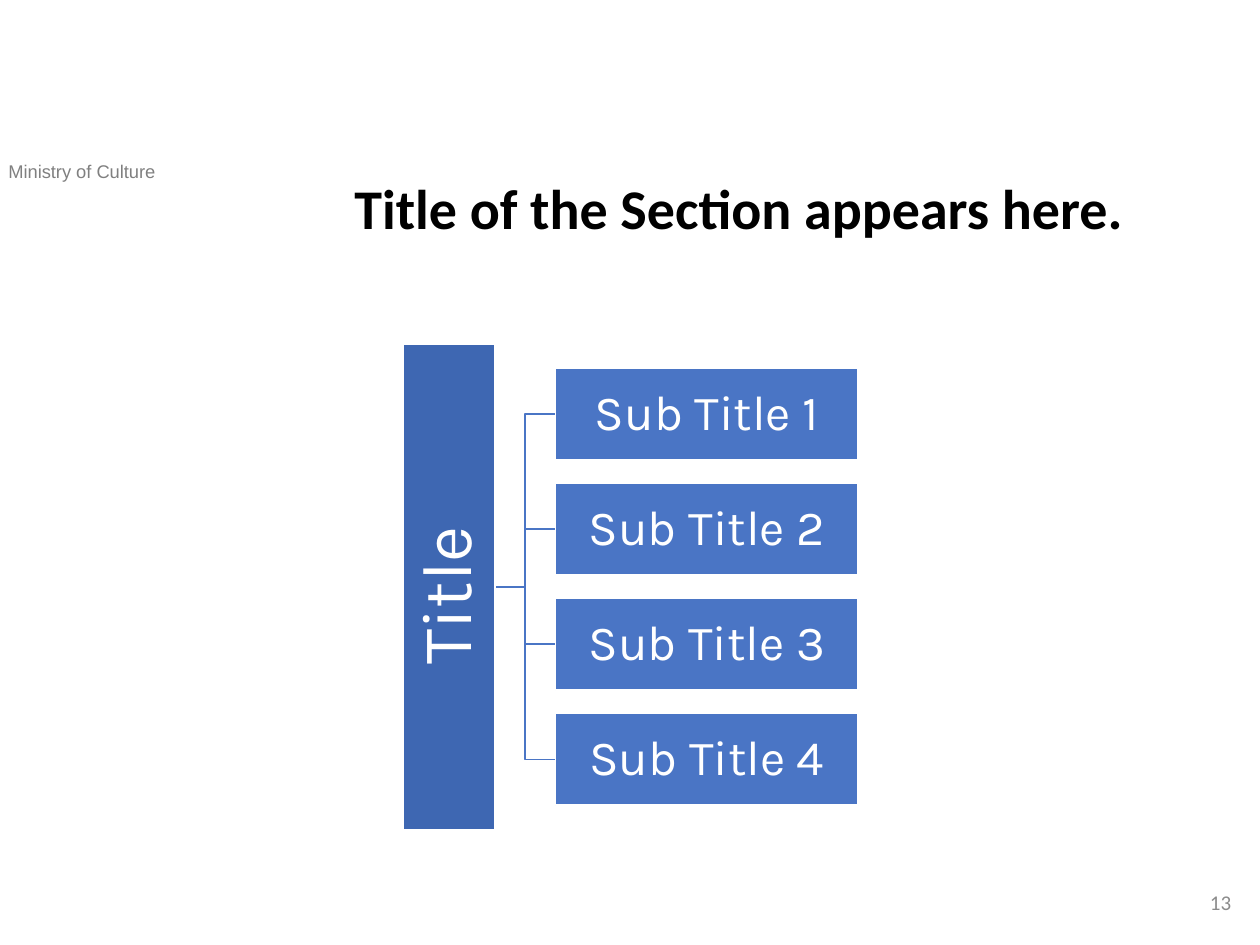
from dataclasses import dataclass

from pptx import Presentation
from pptx import util as u
from pptx.dml.color import RGBColor
from pptx.enum import shapes, text


@dataclass(frozen=True)
class Theme:
    bar: str = "3E67B2"
    box: str = "4A75C5"
    white: str = "FFFFFF"
    black: str = "000000"
    header: str = "808080"
    number: str = "8C8C8C"
    heading_font: str = "Calibri"
    header_font: str = "Arial"
    diagram_font: str = "Karla"
    heading_pt: float = 32
    bar_pt: float = 40
    box_pt: float = 28
    header_pt: float = 10.5
    number_pt: float = 12
    line_pt: float = 1


class Deck:
    def __init__(self, prs, theme):
        self.theme = theme
        self.s = prs.slides.add_slide(prs.slide_layouts[5])

    def set_text(self, sp, words, font, size, color, align, anchor, bold=False, spacing=1.0):
        tf = sp.text_frame
        tf.word_wrap = True
        tf.auto_size = text.MSO_AUTO_SIZE.NONE
        tf.vertical_anchor = anchor
        p = tf.paragraphs[0]
        p.alignment = align
        p.line_spacing = spacing
        p.space_before = u.Pt(0)
        r = p.add_run()
        r.text = words
        r.font.name = font
        r.font.size = u.Pt(size)
        r.font.bold = bold
        r.font.color.rgb = RGBColor.from_string(color)

    def heading(self, words, x, y, w, h):
        sp = self.s.shapes.title
        sp.left, sp.top, sp.width, sp.height = map(u.Cm, (x, y, w, h))
        self.set_text(sp, words, self.theme.heading_font, self.theme.heading_pt, self.theme.black,
                      text.PP_ALIGN.CENTER, text.MSO_ANCHOR.TOP, bold=True, spacing=0.9)

    def label(self, words, x, y, w, h, font, size, color, align, anchor):
        sp = self.s.shapes.add_textbox(*map(u.Cm, (x, y, w, h)))
        self.set_text(sp, words, font, size, color, align, anchor)

    def block(self, words, cx, cy, w, h, fill, size, inset, rotation=0):
        """Draw a filled rectangle centred on (cx, cy)."""
        sp = self.s.shapes.add_shape(shapes.MSO_SHAPE.RECTANGLE,
                                     *map(u.Cm, (cx - w / 2, cy - h / 2, w, h)))
        sp.rotation = rotation
        sp.shadow.inherit = False
        sp.fill.solid()
        sp.fill.fore_color.rgb = RGBColor.from_string(fill)
        sp.line.color.rgb = RGBColor.from_string(self.theme.white)
        sp.line.width = u.Pt(self.theme.line_pt)
        tf = sp.text_frame
        tf.margin_left = tf.margin_right = tf.margin_top = tf.margin_bottom = u.Cm(inset)
        self.set_text(sp, words, self.theme.diagram_font, size, self.theme.white,
                      text.PP_ALIGN.CENTER, text.MSO_ANCHOR.MIDDLE, spacing=0.9)

    def branch(self, x1, y1, x2, y2):
        """Draw an open elbow line that turns halfway between x1 and x2."""
        mid = (x1 + x2) / 2
        fb = self.s.shapes.build_freeform(u.Cm(x1), u.Cm(y1))
        fb.add_line_segments([(u.Cm(x), u.Cm(y)) for x, y in ((mid, y1), (mid, y2), (x2, y2))],
                             close=False)
        sp = fb.convert_to_shape()
        sp.shadow.inherit = False
        sp.fill.background()
        sp.line.color.rgb = RGBColor.from_string(self.theme.box)
        sp.line.width = u.Pt(self.theme.line_pt)


def main():
    prs = Presentation()
    prs.slide_width, prs.slide_height = u.Cm(25.4), u.Cm(19.05)
    theme = Theme()
    deck = Deck(prs, theme)

    deck.label("Ministry of Culture", -0.08, 3.1, 5.54, 0.71, theme.header_font,
               theme.header_pt, theme.header, text.PP_ALIGN.LEFT, text.MSO_ANCHOR.TOP)
    deck.label("13", 19.35, 17.68, 5.72, 1.02, theme.heading_font,
               theme.number_pt, theme.number, text.PP_ALIGN.RIGHT, text.MSO_ANCHOR.MIDDLE)
    deck.heading("Title of the Section appears here.", 6.7, 3.53, 16.4, 2)

    thick, bar_length, box_width, pitch = 1.85, 9.78, 6.1, 2.32
    bar_x, center_y, box_left = 9.05, 11.83, 11.2
    subtitles = [f"Sub Title {n}" for n in range(1, 5)]
    first_y = center_y - pitch * (len(subtitles) - 1) / 2
    rows = [(words, first_y + i * pitch) for i, words in enumerate(subtitles)]

    for _, y in rows:
        deck.branch(bar_x + thick / 2, center_y, box_left, y)
    deck.block("Title ", bar_x, center_y, bar_length, thick, theme.bar, theme.bar_pt,
               inset=0.07, rotation=270)
    for words, y in rows:
        deck.block(words, box_left + box_width / 2, y, box_width, thick, theme.box,
                   theme.box_pt, inset=0.05)

    prs.save("out.pptx")


if __name__ == "__main__":
    main()
